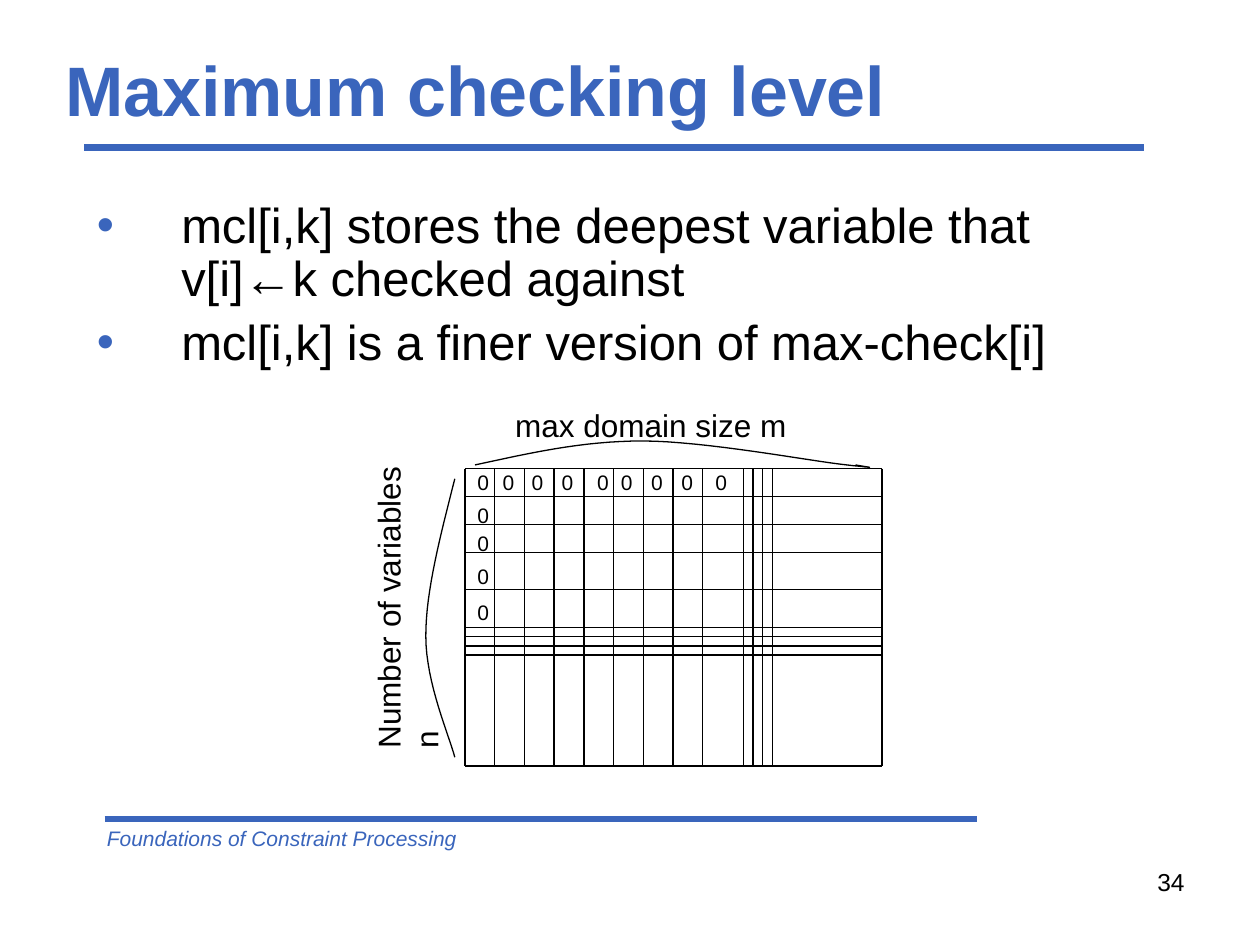
from lxml.etree import SubElement
from pptx import Presentation
from pptx.dml.color import RGBColor
from pptx.enum.shapes import MSO_CONNECTOR as Connector
from pptx.enum.text import MSO_ANCHOR as Anchor, PP_ALIGN as Align
from pptx.oxml.ns import qn
from pptx.util import Inches, Pt

# Content
TITLE = "Maximum checking level"
BULLETS = [
    "mcl[i,k] stores the deepest variable that v[i]←k checked against",
    "mcl[i,k] is a finer version of max-check[i]",
]
COLUMN_LABEL = "max domain size m"
ROW_LABEL = "Number of variables n"
FOOTER = "Foundations of Constraint Processing"
SLIDE_NUMBER = "34"
COLORS = {"blue": "3A65BC", "black": "000000"}
FONT = "Arial"

# Slide grid: 10 columns by 7.5 rows of one inch
SLIDE_WIDTH, SLIDE_HEIGHT = 10, 7.5

# Matrix edges: even cells, then narrow cells standing for "and so on"
LEFT, RIGHT, TOP, BOTTOM = 3.69, 7, 3.72, 6.08
CELL_WIDTH, CELL_HEIGHT = 0.236, 0.222
column_edges = [LEFT + CELL_WIDTH * i for i in range(9)]
column_edges += [5.9 + 0.077 * i for i in range(4)] + [RIGHT]
row_edges = [TOP + CELL_HEIGHT * i for i in range(4)] + [4.68]
row_edges += [4.98 + 0.073 * i for i in range(4)] + [BOTTOM]

# Zeros fill the first row and the first column
ZERO_LEFTS = [3.69, 3.89, 4.12, 4.36, 4.64, 4.83, 5.07, 5.31, 5.58]
ZERO_TOPS = [3.68, 3.94, 4.16, 4.42, 4.71]
zero_places = [(left, ZERO_TOPS[0]) for left in ZERO_LEFTS]
zero_places += [(LEFT, top) for top in ZERO_TOPS[1:]]

# Braces: a start point, then cubic curves of two controls and an end
ROW_BRACE = [(3.61, 3.8), (3.5, 4.24), (3.38, 4.68), (3.38, 5.05),
             (3.38, 5.42), (3.57, 5.85), (3.61, 6.01)]
COLUMN_BRACE = [(3.77, 3.69), (4.19, 3.6), (4.61, 3.5), (5.1, 3.5),
                (5.59, 3.5), (6.44, 3.66), (6.72, 3.69),
                (7, 3.72), (6.9, 3.71), (6.79, 3.69)]
CURVE_STEPS = 16

presentation = Presentation()
presentation.slide_width = Inches(SLIDE_WIDTH)
presentation.slide_height = Inches(SLIDE_HEIGHT)
slide = presentation.slides.add_slide(presentation.slide_layouts[6])


def color(name):
    return RGBColor.from_string(COLORS[name])


def add_line(x1, y1, x2, y2, name="black", width=0.75):
    line = slide.shapes.add_connector(
        Connector.STRAIGHT, Inches(x1), Inches(y1), Inches(x2), Inches(y2))
    line.line.color.rgb = color(name)
    line.line.width = Pt(width)
    SubElement(line.element.spPr, qn("a:effectLst"))


def add_text(text, box, size, name="black", wrap=True, bold=False, italic=False):
    shape = slide.shapes.add_textbox(*map(Inches, box))
    frame = shape.text_frame
    frame.text = text
    frame.word_wrap = wrap
    for paragraph in frame.paragraphs:
        for run in paragraph.runs:
            font = run.font
            font.name, font.size = FONT, Pt(size)
            font.bold, font.italic = bold, italic
            font.color.rgb = color(name)
    return shape


def curve_points(nodes):
    points = [nodes[0]]
    for first in range(0, len(nodes) - 1, 3):
        controls = nodes[first:first + 4]
        for step in range(1, CURVE_STEPS + 1):
            t = step / CURVE_STEPS
            weights = ((1 - t) ** 3, 3 * t * (1 - t) ** 2,
                       3 * t ** 2 * (1 - t), t ** 3)
            points.append(tuple(
                sum(w * node[axis] for w, node in zip(weights, controls))
                for axis in (0, 1)))
    return points


def add_brace(nodes):
    points = [(Inches(x), Inches(y)) for x, y in curve_points(nodes)]
    builder = slide.shapes.build_freeform(*points[0])
    builder.add_line_segments(points[1:], close=False)
    brace = builder.convert_to_shape()
    brace.shadow.inherit = False
    brace.fill.background()
    brace.line.color.rgb = color("black")
    brace.line.width = Pt(0.75)


def add_bullet(paragraph):
    properties = paragraph._p.get_or_add_pPr()
    properties.set("marL", str(Inches(0.67)))
    properties.set("indent", str(-Inches(0.67)))
    bullet_color = SubElement(properties, qn("a:buClr"))
    SubElement(bullet_color, qn("a:srgbClr"), val=COLORS["blue"])
    SubElement(properties, qn("a:buFont"), typeface=FONT)
    SubElement(properties, qn("a:buChar"), char="•")
    paragraph.line_spacing = 0.9


# Rules, footer and slide number
add_line(0.67, 1.17, 9.08, 1.17, "blue", 4)
add_line(0.83, 6.5, 7.75, 6.5, "blue", 4)
add_text(FOOTER, (0.75, 6.5, 5.25, 0.3), 12, "blue", italic=True)
number = add_text(SLIDE_NUMBER, (7.17, 6.83, 2.33, 0.52), 14)
number.text_frame.paragraphs[0].alignment = Align.RIGHT

# Title and bullets
title = add_text(TITLE, (0.42, 0.33, 9, 0.75), 40, "blue", bold=True)
title.text_frame.vertical_anchor = Anchor.MIDDLE
body = add_text("\n".join(BULLETS), (0.67, 1.55, 8.75, 1.2), 28)
for index, paragraph in enumerate(body.text_frame.paragraphs):
    add_bullet(paragraph)
    paragraph.space_before = Pt(6 if index else 0)

# Matrix
for x in column_edges:
    add_line(x, TOP, x, BOTTOM)
for y in row_edges:
    add_line(LEFT, y, RIGHT, y)
for left, top in zero_places:
    add_text("0", (left, top, 0.29, 0.3), 12, wrap=False)

# Braces and their labels
add_brace(ROW_BRACE)
add_brace(COLUMN_BRACE)
add_text(COLUMN_LABEL, (3.99, 3.17, 2.35, 0.4), 18, wrap=False)
row_label = add_text(ROW_LABEL, (1.81, 4.57, 2.54, 0.4), 18, wrap=False)
row_label.rotation = 270

presentation.save("out.pptx")
